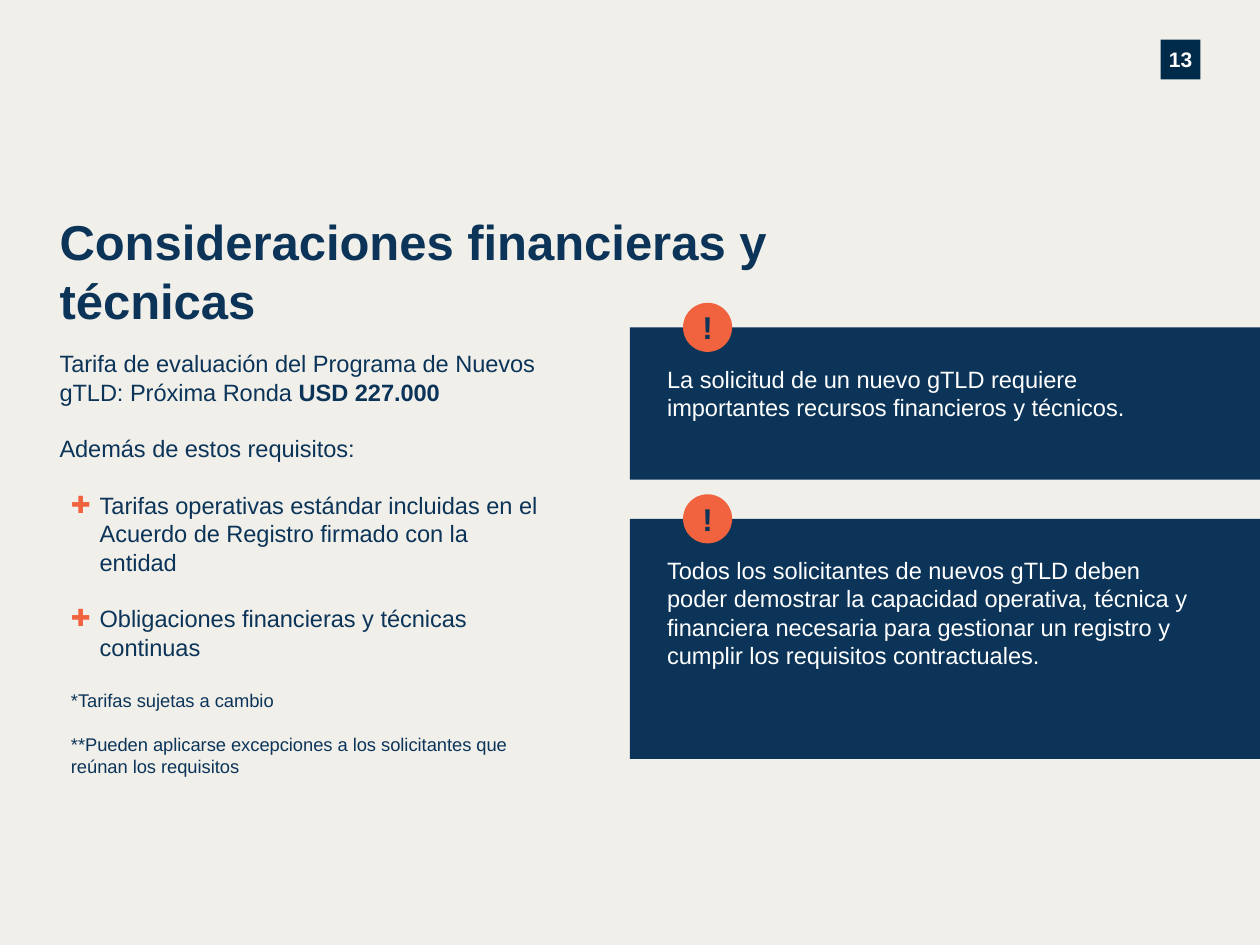
from lxml.etree import SubElement
from pptx import Presentation
from pptx.dml.color import RGBColor
from pptx.enum.shapes import MSO_SHAPE
from pptx.enum.text import MSO_ANCHOR, MSO_AUTO_SIZE, PP_ALIGN
from pptx.oxml.ns import qn
from pptx.util import Cm, Pt

# Content
TITLE = "Consideraciones financieras y técnicas"
PAGE_NUMBER = "13"
# Each paragraph: style, gap before in points, runs of (text, bold)
BODY = [
    ("text", 0, [("Tarifa de evaluación del Programa de Nuevos gTLD: Próxima Ronda ", False),
                 ("USD 227.000", True)]),
    ("text", 16.2, [("Además de estos requisitos:", False)]),
    ("bullet", 16.2, [("Tarifas operativas estándar incluidas en el Acuerdo de Registro "
                       "firmado con la entidad", False)]),
    ("bullet", 16.2, [("Obligaciones financieras y técnicas continuas", False)]),
    ("note", 16.2, [("*Tarifas sujetas a cambio", False)]),
    ("note", 12.5, [("**Pueden aplicarse excepciones a los solicitantes que reúnan "
                     "los requisitos", False)]),
]
# Each card: top and height in cm, text
CARDS = [
    (6.6, 3.07, "La solicitud de un nuevo gTLD requiere importantes recursos "
                "financieros y técnicos."),
    (10.46, 4.84, "Todos los solicitantes de nuevos gTLD deben poder demostrar la capacidad "
                  "operativa, técnica y financiera necesaria para gestionar un registro y "
                  "cumplir los requisitos contractuales."),
]

# Theme
THEME = {
    "font": "Arial",
    "paper": RGBColor.from_string("F1EFEA"),
    "navy": RGBColor.from_string("0B3458"),
    "dark": RGBColor.from_string("002A49"),
    "orange": RGBColor.from_string("F1633E"),
    "white": RGBColor.from_string("FFFFFF"),
    "title": 28, "text": 13.5, "bullet": 13.5, "note": 10.5, "number": 12, "mark": 18,
}
# Left margin and first-line indent in cm
INDENTS = {"text": (0, 0), "bullet": (0.81, -0.58), "note": (0.23, 0)}
SLIDE_WIDTH, SLIDE_HEIGHT = 25.4, 19.05
MARGIN = 1.2
CARD_LEFT = SLIDE_WIDTH / 2
BADGE_SIZE, BADGE_LEFT = 0.99, 13.77
NUMBER_SIZE, NUMBER_TOP = 0.8, 0.8


def set_attributes(target, values):
    for name, value in values.items():
        setattr(target, name, value)


def place(shape, left, top, width, height):
    set_attributes(shape, {"left": Cm(left), "top": Cm(top),
                           "width": Cm(width), "height": Cm(height)})


def format_frame(frame, insets=(0, 0, 0, 0), anchor=MSO_ANCHOR.TOP):
    sides = ("margin_left", "margin_top", "margin_right", "margin_bottom")
    set_attributes(frame, {"word_wrap": True, "auto_size": MSO_AUTO_SIZE.NONE,
                           "vertical_anchor": anchor,
                           **{side: Cm(inset) for side, inset in zip(sides, insets)}})


def add_run(paragraph, text, size, color, bold=False):
    run = paragraph.add_run()
    run.text = text
    set_attributes(run.font, {"name": THEME["font"], "size": Pt(THEME[size]), "bold": bold})
    run.font.color.rgb = THEME[color]


def set_bullet(paragraph, style):
    properties = paragraph._p.get_or_add_pPr()
    left, first = INDENTS[style]
    properties.set("marL", str(Cm(left)))
    properties.set("indent", str(Cm(first)))
    if style == "bullet":
        color = SubElement(properties, qn("a:buClr"))
        SubElement(color, qn("a:srgbClr"), val=str(THEME["orange"]))
        SubElement(properties, qn("a:buFont"), typeface=THEME["font"])
        SubElement(properties, qn("a:buChar"), char="✚")
    else:
        SubElement(properties, qn("a:buNone"))


def add_block(slide, kind, box, fill, text, size, color, bold=False,
              align=PP_ALIGN.CENTER, anchor=MSO_ANCHOR.MIDDLE, insets=(0, 0, 0, 0)):
    shape = slide.shapes.add_shape(kind, *(Cm(length) for length in box))
    shape.shadow.inherit = False
    shape.fill.solid()
    shape.fill.fore_color.rgb = THEME[fill]
    shape.line.fill.background()
    format_frame(shape.text_frame, insets, anchor)
    paragraph = shape.text_frame.paragraphs[0]
    paragraph.alignment = align
    add_run(paragraph, text, size, color, bold)
    return shape


def main():
    presentation = Presentation()
    set_attributes(presentation, {"slide_width": Cm(SLIDE_WIDTH),
                                  "slide_height": Cm(SLIDE_HEIGHT)})
    slide = presentation.slides.add_slide(presentation.slide_layouts[1])
    slide.background.fill.solid()
    slide.background.fill.fore_color.rgb = THEME["paper"]

    # Page number
    add_block(slide, MSO_SHAPE.RECTANGLE,
              (SLIDE_WIDTH - MARGIN - NUMBER_SIZE, NUMBER_TOP, NUMBER_SIZE, NUMBER_SIZE),
              "dark", PAGE_NUMBER, "number", "white", bold=True)

    # Title
    title = slide.shapes.title
    place(title, MARGIN, 4.27, 18.26, 2.08)
    format_frame(title.text_frame)
    heading = title.text_frame.paragraphs[0]
    heading.alignment = PP_ALIGN.LEFT
    add_run(heading, TITLE, "title", "navy", bold=True)

    # Fees and requirements
    body = slide.placeholders[1]
    place(body, MARGIN, 7.04, 9.73, 8.13)
    format_frame(body.text_frame)
    for index, (style, gap, runs) in enumerate(BODY):
        frame = body.text_frame
        paragraph = frame.add_paragraph() if index else frame.paragraphs[0]
        set_bullet(paragraph, style)
        set_attributes(paragraph, {"space_before": Pt(gap), "alignment": PP_ALIGN.LEFT})
        for text, bold in runs:
            add_run(paragraph, text, style, "navy", bold)

    # Cards, each with a badge centred on its top edge
    for top, height, text in CARDS:
        add_block(slide, MSO_SHAPE.RECTANGLE, (CARD_LEFT, top, SLIDE_WIDTH - CARD_LEFT, height),
                  "navy", text, "text", "white", align=PP_ALIGN.LEFT,
                  anchor=MSO_ANCHOR.TOP, insets=(0.75, 0.75, 1.27, 0.56))
        add_block(slide, MSO_SHAPE.OVAL,
                  (BADGE_LEFT, top - BADGE_SIZE / 2, BADGE_SIZE, BADGE_SIZE),
                  "orange", "!", "mark", "navy", bold=True, insets=(0.18, 0.1, 0.18, 0.1))

    presentation.save("out.pptx")


if __name__ == "__main__":
    main()
